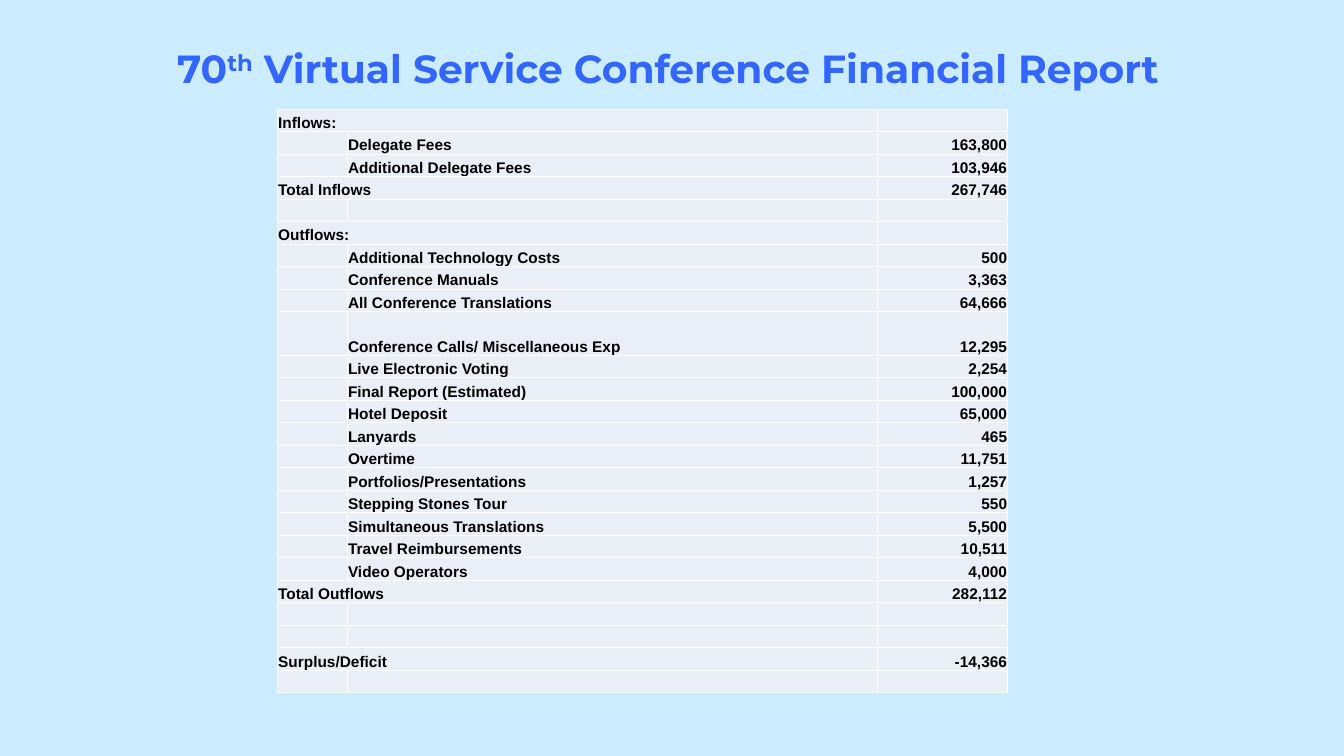
from lxml import etree
from pptx import Presentation
from pptx import util as u
from pptx.dml import color
from pptx.enum import text
from pptx.oxml import ns

ITEMS = [
    ("Inflows:", "", ""),
    ("", "Delegate Fees", "163,800"),
    ("", "Additional Delegate Fees", "103,946"),
    ("Total Inflows", "", "267,746"),
    ("", "", ""),
    ("Outflows:", "", ""),
    ("", "Additional Technology Costs", "500"),
    ("", "Conference Manuals", "3,363"),
    ("", "All Conference Translations", "64,666"),
    ("", "Conference Calls/ Miscellaneous Exp", "12,295"),
    ("", "Live Electronic Voting", "2,254"),
    ("", "Final Report (Estimated)", "100,000"),
    ("", "Hotel Deposit", "65,000"),
    ("", "Lanyards", "465"),
    ("", "Overtime", "11,751"),
    ("", "Portfolios/Presentations", "1,257"),
    ("", "Stepping Stones Tour", "550"),
    ("", "Simultaneous Translations", "5,500"),
    ("", "Travel Reimbursements", "10,511"),
    ("", "Video Operators", "4,000"),
    ("Total Outflows", "", "282,112"),
    ("", "", ""),
    ("", "", ""),
    ("Surplus/Deficit", "", "-14,366"),
    ("", "", ""),
]
TALL_ROW = 9
TALL = 1.1
HEIGHT = 14.72
WIDTHS = [1.76, 13.36, 3.29]


def rgb(code):
    return color.RGBColor.from_string(code)


def write(para, words, font="Arial", size=11, ink="000000", bold=True,
          align=text.PP_ALIGN.LEFT, base=0):
    para.alignment = align
    if not words:
        end = etree.SubElement(para._p, ns.qn("a:endParaRPr"))
        end.set("sz", str(size * 100))
        return
    run = para.add_run()
    run.text = words
    run.font.name = font
    run.font.size = u.Pt(size)
    run.font.bold = bold
    run.font.color.rgb = rgb(ink)
    if base:
        run.font._element.set("baseline", str(base * 1000))


class Deck:
    back = "CCECFF"
    blue = "3366FF"
    pale = "EAEFF7"
    white = "FFFFFF"

    def __init__(self):
        self.show = Presentation()
        self.show.slide_width = u.Cm(33.87)
        self.show.slide_height = u.Cm(19.05)
        self.slide = self.show.slides.add_slide(self.show.slide_layouts[5])
        fill = self.slide.background.fill
        fill.solid()
        fill.fore_color.rgb = rgb(self.back)

    def title(self, parts, left, top, width, height):
        box = self.slide.shapes.title
        box.left, box.top = u.Cm(left), u.Cm(top)
        box.width, box.height = u.Cm(width), u.Cm(height)
        frame = box.text_frame
        frame.word_wrap = True
        frame.auto_size = text.MSO_AUTO_SIZE.NONE
        frame.vertical_anchor = text.MSO_ANCHOR.MIDDLE
        para = frame.paragraphs[0]
        para.line_spacing = 0.9
        for words, base in parts:
            write(para, words, font="Montserrat", size=28, ink=self.blue,
                  align=text.PP_ALIGN.CENTER, base=base)

    def edge(self, cell):
        props = cell._tc.get_or_add_tcPr()
        for side in ("lnL", "lnR", "lnT", "lnB"):
            line = etree.SubElement(props, ns.qn("a:" + side), w=str(u.Pt(1)))
            fill = etree.SubElement(line, ns.qn("a:solidFill"))
            etree.SubElement(fill, ns.qn("a:srgbClr"), val=self.white)

    def cell(self, cell, words, align):
        self.edge(cell)
        cell.fill.solid()
        cell.fill.fore_color.rgb = rgb(self.pale)
        cell.vertical_anchor = text.MSO_ANCHOR.BOTTOM
        cell.margin_left = cell.margin_right = cell.margin_top = u.Cm(0.02)
        cell.margin_bottom = 0
        write(cell.text_frame.paragraphs[0], words, align=align)

    def table(self, items, left, top):
        grid = self.slide.shapes.add_table(
            len(items), len(WIDTHS), u.Cm(left), u.Cm(top),
            u.Cm(sum(WIDTHS)), u.Cm(HEIGHT)).table
        grid.first_row = grid.horz_banding = False
        for col, width in zip(grid.columns, WIDTHS):
            col.width = u.Cm(width)
        short = (HEIGHT - TALL) / (len(items) - 1)
        for r, item in enumerate(items):
            grid.rows[r].height = u.Cm(TALL if r == TALL_ROW else short)
            for c, words in enumerate(item):
                side = text.PP_ALIGN.RIGHT if c == 2 else text.PP_ALIGN.LEFT
                self.cell(grid.cell(r, c), words, side)
            if item[0]:
                grid.cell(r, 0).merge(grid.cell(r, 1))


def main():
    deck = Deck()
    deck.title([("70", 0), ("th", 30),
                (" Virtual Service Conference Financial Report", 0)],
               -0.1, 0.84, 33.87, 1.9)
    deck.table(ITEMS, 6.99, 2.75)
    deck.show.save("out.pptx")


if __name__ == "__main__":
    main()
